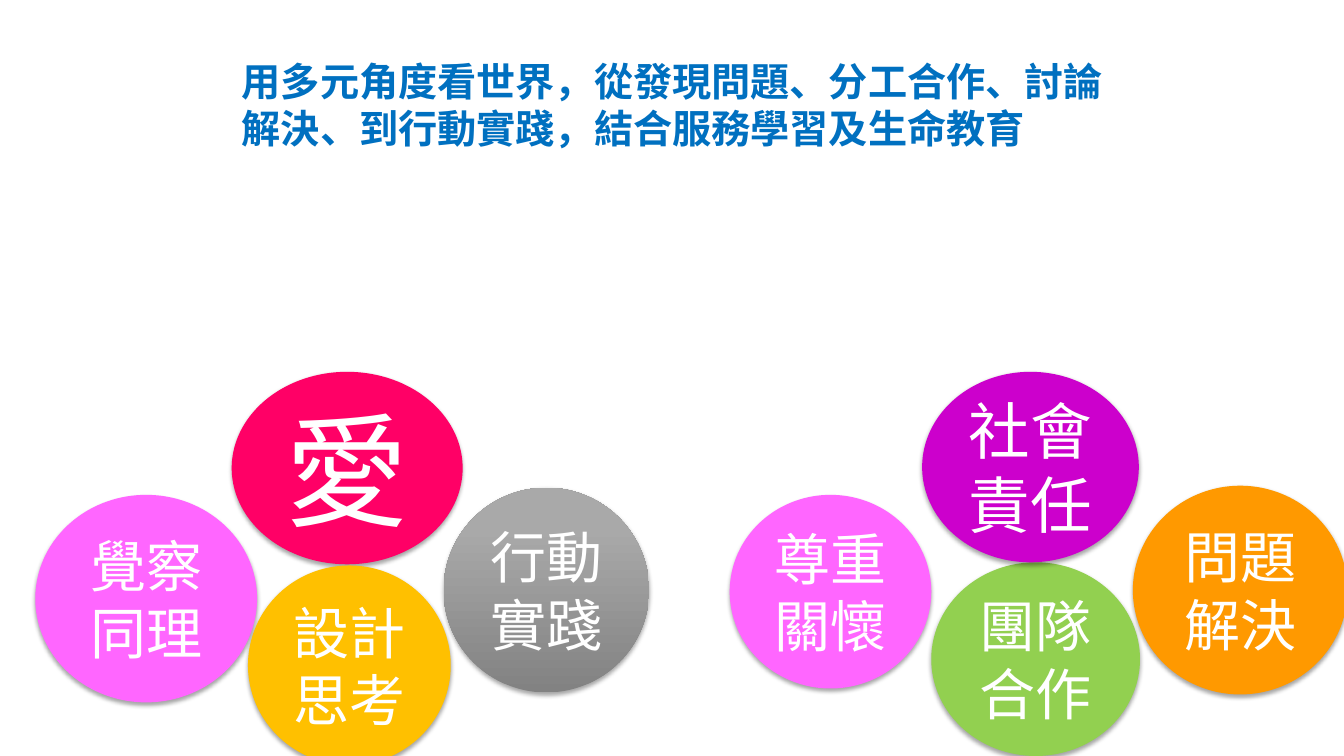
import pptx
import pptx.dml.color
import pptx.enum.shapes
import pptx.enum.text
import pptx.oxml
import pptx.oxml.ns
import pptx.util
from lxml import etree

Cm = pptx.util.Cm
FONT = "Noto Sans CJK SC"
WHITE = "FFFFFF"
GREY_GRADIENT = ("828282", "A9A9A9")

HEADING = "用多元角度看世界，從發現問題、分工合作、討論解決、到行動實踐，結合服務學習及生命教育"
HEADING_BOX = (5.84, 1.32, 23.11, 2.64)

# Each bubble: lines, point size, fill, (left, top, width, height) in cm within its cluster
ACTION_BUBBLES = [
    (["覺察", "同理"], 40, "FF66FF", (0, 3.1, 5.59, 5.23)),
    (["行動實踐"], 40, GREY_GRADIENT, (10.29, 2.92, 5.18, 5.16)),
    (["愛"], 88, "FF0066", (4.95, 0, 5.82, 4.85)),
    (["設計", "思考"], 40, "FFC000", (5.36, 4.88, 5.11, 5.03)),
]
CITIZEN_BUBBLES = [
    (["團隊合作"], 40, "92D050", (5.08, 4.8, 5.26, 4.88)),
    (["問題解決"], 40, "FF9900", (10.16, 2.87, 5.41, 5.26)),
    (["尊重關懷"], 40, "FF66FF", (0, 3.1, 5.08, 4.88)),
    (["社會責任"], 44, "CC00CC", (4.85, 0, 5.46, 4.8)),
]
CLUSTERS = [((0.89, 9.37), ACTION_BUBBLES), ((18.39, 9.37), CITIZEN_BUBBLES)]


def color(hex_code):
    return pptx.dml.color.RGBColor.from_string(hex_code)


def set_attributes(target, values):
    for name, value in values.items():
        setattr(target, name, value)


def write_lines(frame, lines, align, size, hex_code, bold=False):
    """Fill the frame with one paragraph per line, in the Latin and East Asian font."""
    for index, line in enumerate(lines):
        paragraph = frame.add_paragraph() if index else frame.paragraphs[0]
        paragraph.alignment = align
        run = paragraph.add_run()
        run.text = line
        set_attributes(run.font, {"size": pptx.util.Pt(size), "bold": bold, "name": FONT})
        run.font.color.rgb = color(hex_code)
        east_asian = etree.SubElement(run.font._element, pptx.oxml.ns.qn("a:ea"))
        east_asian.set("typeface", FONT)


def add_heading(slide, box):
    heading = slide.shapes.title
    left, top, width, height = map(Cm, box)
    set_attributes(heading, {"left": left, "top": top, "width": width, "height": height})
    set_attributes(heading.text_frame, {
        "word_wrap": True,
        "auto_size": pptx.enum.text.MSO_AUTO_SIZE.NONE,
        "vertical_anchor": pptx.enum.text.MSO_ANCHOR.TOP,
    })
    write_lines(heading.text_frame, [HEADING], pptx.enum.text.PP_ALIGN.LEFT,
                28, "0070C0", bold=True)


def fill_bubble(bubble, fill):
    """Apply a solid hex fill, or a bottom-to-top gradient from a pair of them."""
    if isinstance(fill, str):
        bubble.fill.solid()
        bubble.fill.fore_color.rgb = color(fill)
        return
    bubble.fill.gradient()
    bubble.fill.gradient_angle = 90
    for stop, position, hex_code in zip(bubble.fill.gradient_stops, (0, 0.8), fill):
        stop.position = position
        stop.color.rgb = color(hex_code)


def add_soft_shadow(bubble):
    bubble.shadow.inherit = False
    effects = bubble.element.spPr.find(pptx.oxml.ns.qn("a:effectLst"))
    effects.append(pptx.oxml.parse_xml(
        f'<a:outerShdw {pptx.oxml.ns.nsdecls("a")} blurRad="39370" dist="22860" '
        'dir="5400000" rotWithShape="0"><a:srgbClr val="000000">'
        '<a:alpha val="35000"/></a:srgbClr></a:outerShdw>'))


def add_cluster(slide, origin, bubbles):
    origin_left, origin_top = origin
    for lines, size, fill, (left, top, width, height) in bubbles:
        bubble = slide.shapes.add_shape(
            pptx.enum.shapes.MSO_SHAPE.OVAL,
            Cm(origin_left + left), Cm(origin_top + top), Cm(width), Cm(height))
        fill_bubble(bubble, fill)
        bubble.line.fill.background()
        add_soft_shadow(bubble)
        set_attributes(bubble.text_frame, {
            "word_wrap": True,
            "vertical_anchor": pptx.enum.text.MSO_ANCHOR.MIDDLE,
        })
        write_lines(bubble.text_frame, lines, pptx.enum.text.PP_ALIGN.CENTER, size, WHITE)


def main():
    presentation = pptx.Presentation()
    set_attributes(presentation, {"slide_width": Cm(33.87), "slide_height": Cm(19.05)})
    slide = presentation.slides.add_slide(presentation.slide_layouts[5])
    add_heading(slide, HEADING_BOX)
    for origin, bubbles in CLUSTERS:
        add_cluster(slide, origin, bubbles)
    presentation.save("out.pptx")


if __name__ == "__main__":
    main()
